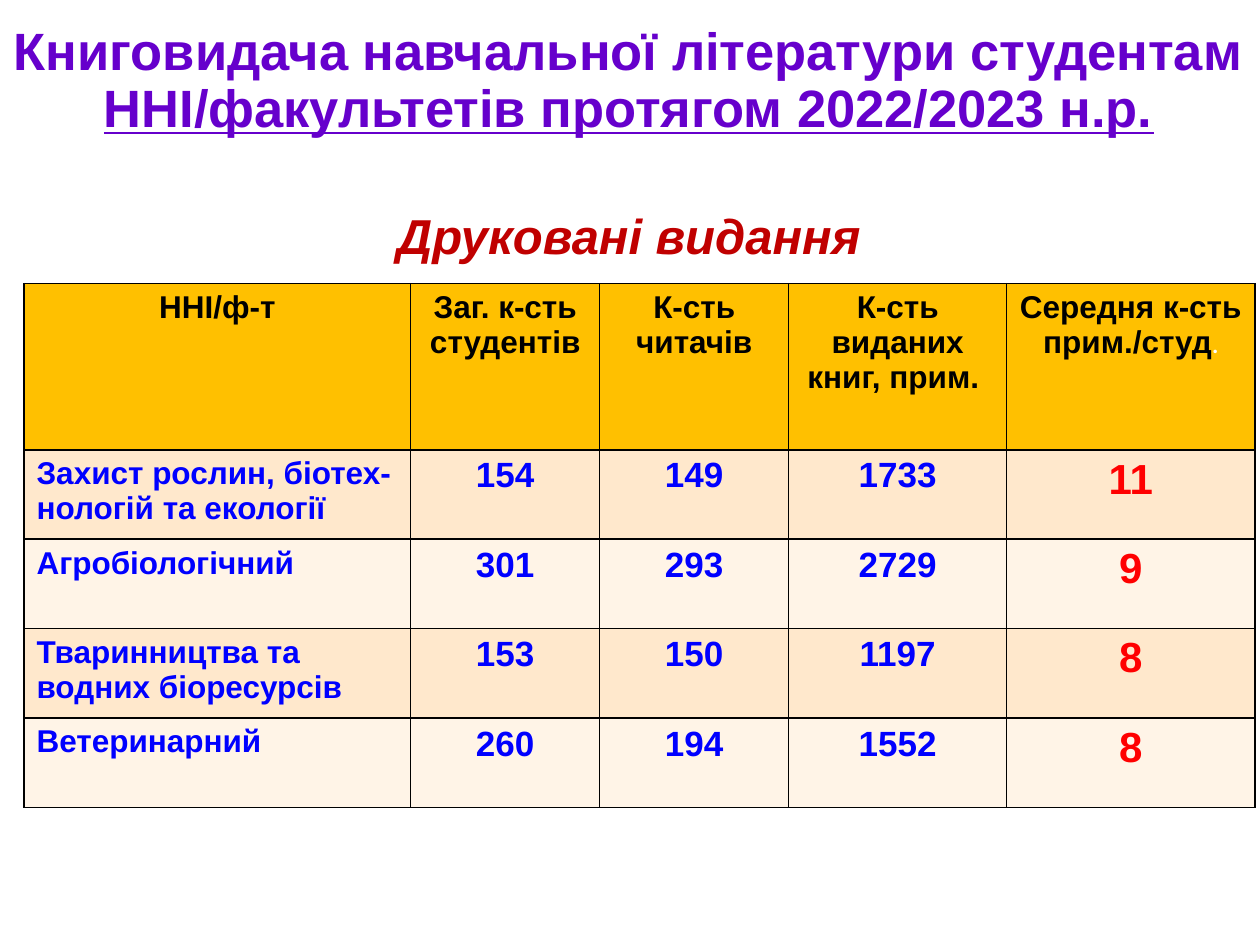
from lxml.etree import SubElement
from pptx import Presentation
from pptx.dml.color import RGBColor
from pptx.enum.text import MSO_ANCHOR, MSO_AUTO_SIZE, PP_ALIGN
from pptx.oxml.ns import qn
from pptx.util import Inches, Pt


def write(frame, text, size, color, font="Arial", bold=True, italic=False,
          underline=None, align=PP_ALIGN.CENTER):
    """Append a formatted run to the first paragraph of a text frame."""
    paragraph = frame.paragraphs[0]
    paragraph.alignment = align
    run = paragraph.add_run()
    run.text = text
    run.font.size = Pt(size)
    run.font.name = font
    run.font.bold = bold
    run.font.italic = italic
    run.font.underline = underline
    run.font.color.rgb = RGBColor.from_string(color)


def style_cell(cell, fill):
    """Give a cell thin black borders and a solid fill."""
    properties = cell._tc.get_or_add_tcPr()
    for side in ("a:lnL", "a:lnR", "a:lnT", "a:lnB"):
        border = SubElement(properties, qn(side), w=str(Pt(1)))
        solid = SubElement(border, qn("a:solidFill"))
        SubElement(solid, qn("a:srgbClr"), val="000000")
    cell.fill.solid()
    cell.fill.fore_color.rgb = RGBColor.from_string(fill)


presentation = Presentation()
presentation.slide_width = Inches(10)
presentation.slide_height = Inches(7.5)
slide = presentation.slides.add_slide(presentation.slide_layouts[5])

# Title
title = slide.shapes.title
title.left, title.top = Inches(0), Inches(0.14)
title.width, title.height = Inches(9.98), Inches(1.02)
heading = title.text_frame
heading.auto_size = MSO_AUTO_SIZE.NONE
heading.vertical_anchor = MSO_ANCHOR.MIDDLE
heading.paragraphs[0].line_spacing = 0.9
write(heading, "Книговидача навчальної літератури студентам ", 30, "6600CC")
write(heading, "ННІ/факультетів протягом 2022/2023 н.р.", 30, "6600CC", underline=True)

# Lending table
headers = ["ННІ/ф-т", "Заг. к-сть студентів", "К-сть читачів",
           "К-сть виданих книг, прим. ", "Середня к-сть прим./студ"]
faculties = [
    ("Захист рослин, біотех-нологій та екології", 154, 149, 1733, 11),
    ("Агробіологічний", 301, 293, 2729, 9),
    ("Тваринництва та водних біоресурсів", 153, 150, 1197, 8),
    ("Ветеринарний", 260, 194, 1552, 8),
]
column_widths = [3.07, 1.5, 1.5, 1.73, 1.97]
row_heights = [1.32] + [0.71] * len(faculties)
lending = slide.shapes.add_table(
    len(row_heights), len(column_widths), Inches(0.19), Inches(2.25),
    Inches(sum(column_widths)), Inches(sum(row_heights))).table
for column, width in zip(lending.columns, column_widths):
    column.width = Inches(width)
for row, height in zip(lending.rows, row_heights):
    row.height = Inches(height)

# Header row
for index, header in enumerate(headers):
    cell = lending.cell(0, index)
    style_cell(cell, "FFC000")
    write(cell.text_frame, header, 18, "000000")
write(lending.cell(0, len(headers) - 1).text_frame, ".", 13.5, "FFFFFF", font="Calibri")

# Faculty rows: name, counts, average
formats = ([dict(size=18, color="0000FF", align=PP_ALIGN.LEFT)]
           + [dict(size=20, color="0000FF")] * 3
           + [dict(size=24, color="FF0000")])
for row_index, faculty in enumerate(faculties, start=1):
    band = "FFE8CC" if row_index % 2 else "FFF4E7"
    for column_index, (value, style) in enumerate(zip(faculty, formats)):
        cell = lending.cell(row_index, column_index)
        style_cell(cell, band)
        write(cell.text_frame, str(value), **style)

# Subtitle
subtitle = slide.shapes.add_textbox(
    Inches(1.88), Inches(1.58), Inches(6.22), Inches(0.57)).text_frame
subtitle.word_wrap = True
subtitle.auto_size = MSO_AUTO_SIZE.SHAPE_TO_FIT_TEXT
write(subtitle, "Друковані видання", 28, "C00000", italic=True)

presentation.save("out.pptx")
